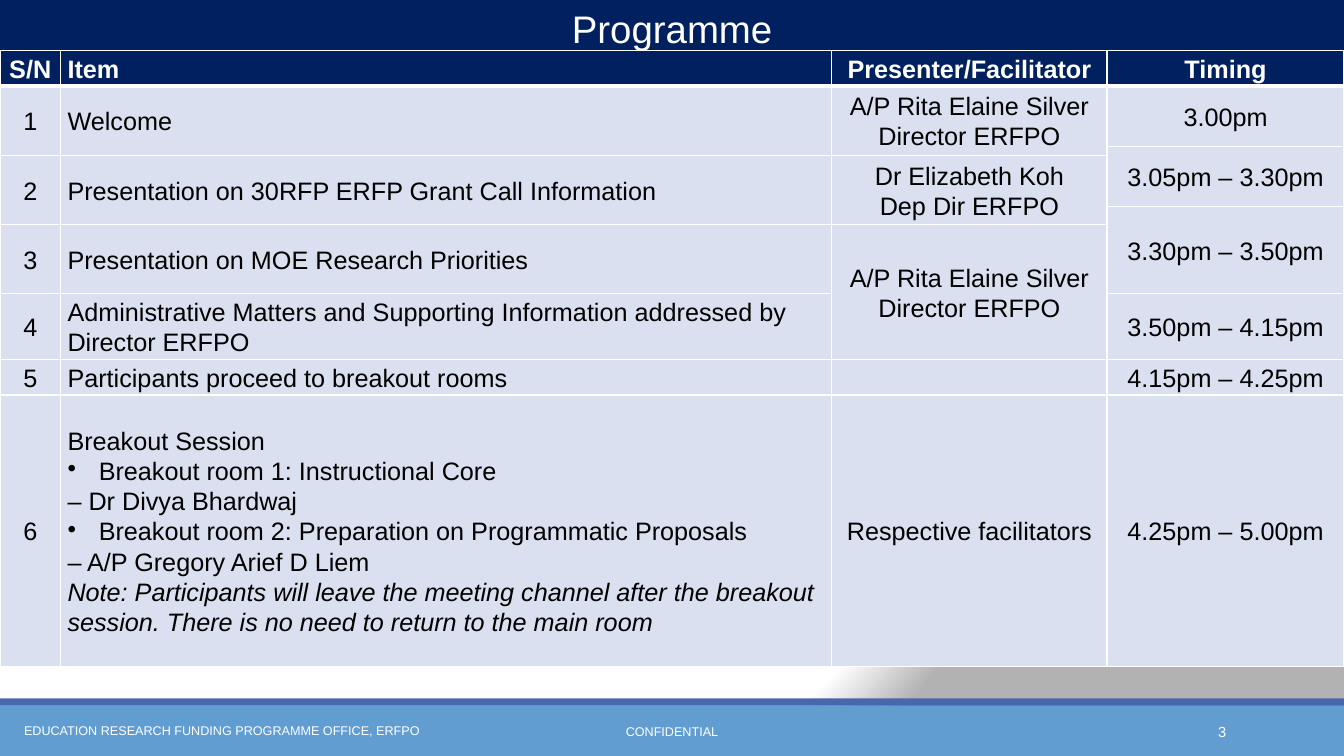
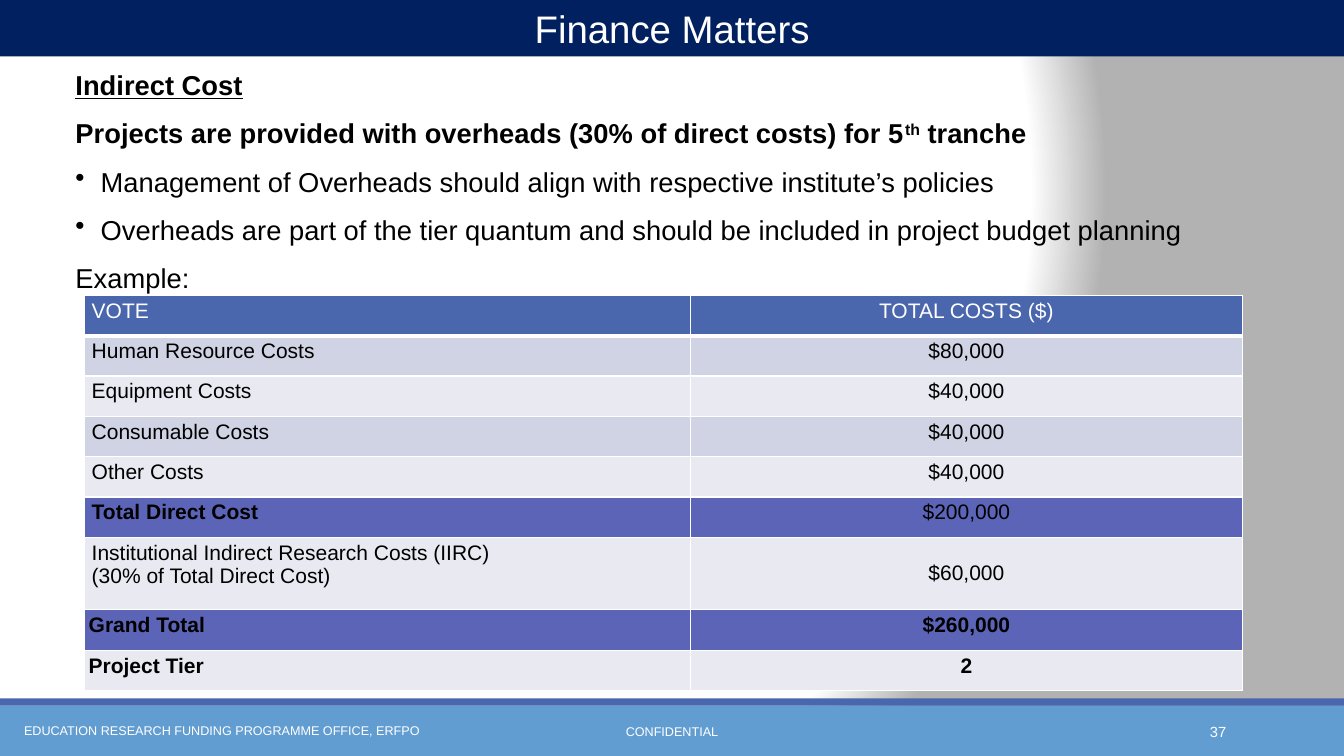
from pptx import Presentation
from pptx.dml.color import RGBColor
from pptx.enum.shapes import MSO_SHAPE
from pptx.enum.text import MSO_ANCHOR, MSO_AUTO_SIZE, PP_ALIGN
from pptx.oxml import parse_xml
from pptx.oxml.ns import nsdecls
from pptx.util import Inches, Pt

FONT = "Arial"
WHITE, BLACK, NAVY = "FFFFFF", "000000", "002060"
SKY, BLUE, PALE = "629DD1", "4A66AC", "DAE0EF"
DARK, LIGHT, TOTAL = "D0D3E3", "E9EAF1", "5C64B7"
LEFT, MID, RIGHT = PP_ALIGN.LEFT, PP_ALIGN.CENTER, PP_ALIGN.RIGHT
NS = nsdecls("a")
hue = RGBColor.from_string


def write(frame, lines, size=18, color=BLACK, bold=False, align=LEFT,
          line=None, space=None, hang=0.25):
    """Each line is a string or a list of runs; a run is text or (text, font)."""
    for i, runs in enumerate(lines):
        para = frame.add_paragraph() if i else frame.paragraphs[0]
        para.alignment = align
        para.line_spacing = line
        para.space_before = Pt(space) if space is not None else None
        if isinstance(runs, str):
            if runs.startswith("• "):
                runs = runs[2:]
                props = para._p.get_or_add_pPr()
                props.set("marL", str(Inches(hang)))
                props.set("indent", str(-Inches(hang)))
                props.append(parse_xml(f'<a:buChar {NS} char="•"/>'))
            runs = [runs]
        for item in runs:
            text, extra = (item, {}) if isinstance(item, str) else item
            run = para.add_run()
            run.text = text
            font = run.font
            font.name, font.size, font.bold = FONT, Pt(size), bold
            font.color.rgb = hue(color)
            for key, value in extra.items():
                setattr(font, key, value)


def grid(slide, box, cols, rows, fills, pads, anchor):
    """Add a table with white rules, one fill per row and pads (side, top, bottom)."""
    table = slide.shapes.add_table(len(rows), len(cols), *map(Inches, box)).table
    table.horz_banding = False
    for col, width in zip(table.columns, cols):
        col.width = Inches(width)
    for r, height in enumerate(rows):
        table.rows[r].height = Inches(height)
        for cell in table.rows[r].cells:
            cell.margin_left = cell.margin_right = Inches(pads[0])
            cell.margin_top, cell.margin_bottom = Inches(pads[1]), Inches(pads[2])
            cell.vertical_anchor = anchor
            cell.fill.solid()
            cell.fill.fore_color.rgb = hue(fills[r])
            for i, side in enumerate("LRTB"):
                thick = (r, side) in [(0, "B"), (1, "T")]
                cell._tc.tcPr.insert(i, parse_xml(
                    f'<a:ln{side} {NS} w="{Pt(3 if thick else 1)}"><a:solidFill>'
                    f'<a:srgbClr val="{WHITE}"/></a:solidFill></a:ln{side}>'))
    return table


deck = Presentation()
deck.slide_width, deck.slide_height = Inches(13.33), Inches(7.5)

# Shared background
back = deck.slide_master.background.fill
back.solid()
solid = deck.slide_master.element.xpath(".//p:bgPr/a:solidFill")[0]
solid.getparent().replace(solid, parse_xml(
    f'<a:gradFill {NS} rotWithShape="1"><a:gsLst>'
    f'<a:gs pos="90000"><a:srgbClr val="{WHITE}"/></a:gs>'
    '<a:gs pos="100000"><a:srgbClr val="B2B2B2"/></a:gs></a:gsLst>'
    '<a:path path="circle"><a:fillToRect l="50000" t="50000" r="100000" b="100000"/>'
    '</a:path></a:gradFill>'))

# Shared title, bands and footer
slides = []
for name, number in [("Programme", "3"), ("Finance Matters", "37")]:
    slide = deck.slides.add_slide(deck.slide_layouts[5])
    slides.append(slide)
    for top, height, color in [(7, 0.5, SKY), (6.93, 0.07, BLUE)]:
        band = slide.shapes.add_shape(MSO_SHAPE.RECTANGLE, 0, Inches(top),
                                      deck.slide_width, Inches(height))
        band.shadow.inherit = False
        band.fill.solid()
        band.fill.fore_color.rgb = hue(color)
        band.line.fill.background()
    title = slide.shapes.title
    title.left, title.top = 0, 0
    title.width, title.height = deck.slide_width, Inches(0.56)
    title.fill.solid()
    title.fill.fore_color.rgb = hue(NAVY)
    title.text_frame.auto_size = MSO_AUTO_SIZE.NONE
    title.text_frame.vertical_anchor = MSO_ANCHOR.MIDDLE
    write(title.text_frame, [name], size=27.4, color=WHITE, align=MID)
    for text, left, top, width, size, align in [
            ("EDUCATION RESEARCH FUNDING PROGRAMME OFFICE, ERFPO",
             0.14, 7.05, 4.5, 9, LEFT),
            ("CONFIDENTIAL", 4.03, 7.06, 5.27, 9, MID),
            (number, 10.83, 7.06, 1.43, 10.5, RIGHT)]:
        frame = slide.shapes.add_textbox(Inches(left), Inches(top),
                                         Inches(width), Inches(0.4)).text_frame
        frame.word_wrap = True
        frame.vertical_anchor = MSO_ANCHOR.MIDDLE
        write(frame, [text], size=size, color=WHITE, align=align)
plan, money = slides

# Programme table: row, column, rows spanned, lines
rows = [0.35, 0.6, 0.09, 0.51, 0.18, 0.68, 0.66, 0.35, 2.69]
table = grid(plan, (0, 0.5, 13.33, 6.07), [0.6, 7.65, 2.73, 2.35], rows,
             [NAVY] + [PALE] * 8, (0.07, 0.01, 0), MSO_ANCHOR.MIDDLE)
chief = ["A/P Rita Elaine Silver", "Director ERFPO"]
for row, col, span, lines in [
        (0, 0, 1, ["S/N"]), (0, 1, 1, ["Item"]),
        (0, 2, 1, ["Presenter/Facilitator"]), (0, 3, 1, ["Timing"]),
        (1, 0, 2, ["1"]), (1, 1, 2, ["Welcome"]),
        (1, 2, 2, chief), (1, 3, 1, ["3.00pm"]),
        (3, 0, 2, ["2"]),
        (3, 1, 2, ["Presentation on 30RFP ERFP Grant Call Information"]),
        (3, 2, 2, ["Dr Elizabeth Koh", "Dep Dir ERFPO"]),
        (2, 3, 2, ["3.05pm – 3.30pm"]),
        (5, 0, 1, ["3"]), (5, 1, 1, ["Presentation on MOE Research Priorities"]),
        (5, 2, 2, chief), (4, 3, 2, ["3.30pm – 3.50pm"]),
        (6, 0, 1, ["4"]),
        (6, 1, 1, ["Administrative Matters and Supporting Information "
                   "addressed by Director ERFPO"]),
        (6, 3, 1, ["3.50pm – 4.15pm"]),
        (7, 0, 1, ["5"]), (7, 1, 1, ["Participants proceed to breakout rooms"]),
        (7, 3, 1, ["4.15pm – 4.25pm"]),
        (8, 0, 1, ["6"]),
        (8, 1, 1, ["Breakout Session",
                   "• Breakout room 1: Instructional Core",
                   "– Dr Divya Bhardwaj",
                   "• Breakout room 2: Preparation on Programmatic Proposals",
                   "– A/P Gregory Arief D Liem",
                   [("Note: Participants will leave the meeting channel after the "
                     "breakout session. There is no need to return to the main room",
                     {"italic": True})]]),
        (8, 2, 1, ["Respective facilitators"]), (8, 3, 1, ["4.25pm – 5.00pm"])]:
    cell = table.cell(row, col)
    if span > 1:
        cell.merge(table.cell(row + span - 1, col))
    write(cell.text_frame, lines, color=BLACK if row else WHITE, bold=row == 0,
          align=LEFT if col == 1 else MID, line=1.07, hang=0.31)

# Indirect cost text
frame = money.shapes.add_textbox(Inches(0.65), Inches(0.63),
                                 Inches(11.79), Inches(2.3)).text_frame
frame.word_wrap = True
strong = {"bold": True}
write(frame, [
    [("Indirect Cost", {"bold": True, "underline": True})],
    [("Projects are provided with overheads (30% of direct costs) for 5", strong),
     ("th", strong), (" tranche", strong)],
    "• Management of Overheads should align with respective institute’s policies",
    "• Overheads are part of the tier quantum and should be included in project "
    "budget planning",
    "Example:"], size=19.5, space=11)
frame.paragraphs[0].space_before = Pt(0)
frame.paragraphs[1].runs[1]._r.get_or_add_rPr().set("baseline", "30000")

# Cost table: label lines, value, fill, bold label, bold value
costs = [
    (["VOTE"], "TOTAL COSTS ($)", BLUE, False, False),
    (["Human Resource Costs"], "$80,000", DARK, False, False),
    (["Equipment Costs"], "$40,000", LIGHT, False, False),
    (["Consumable Costs"], "$40,000", DARK, False, False),
    (["Other Costs"], "$40,000", LIGHT, False, False),
    (["Total Direct Cost"], "$200,000", TOTAL, True, False),
    (["Institutional Indirect Research Costs (IIRC)",
      "(30% of Total Direct Cost)"], "$60,000", LIGHT, False, False),
    (["Grand Total"], "$260,000", TOTAL, True, True),
    (["Project Tier"], "2", LIGHT, True, True)]
table = grid(money, (0.84, 2.93, 11.48, 3.92), [6.01, 5.47],
             [0.72 if len(cost[0]) > 1 else 0.4 for cost in costs],
             [cost[2] for cost in costs], (0.07, 0.04, 0.04), MSO_ANCHOR.TOP)
for row, (label, value, fill, *bolds) in enumerate(costs):
    for col, lines in enumerate([label, [value]]):
        cell = table.cell(row, col)
        write(cell.text_frame, lines, size=15, color=BLACK if row else WHITE,
              bold=bolds[col], align=MID if col else LEFT)
        if bolds[1]:
            cell.margin_left = cell.margin_right = Inches(0.04)
table.cell(6, 1).vertical_anchor = MSO_ANCHOR.MIDDLE

deck.save("out.pptx")
